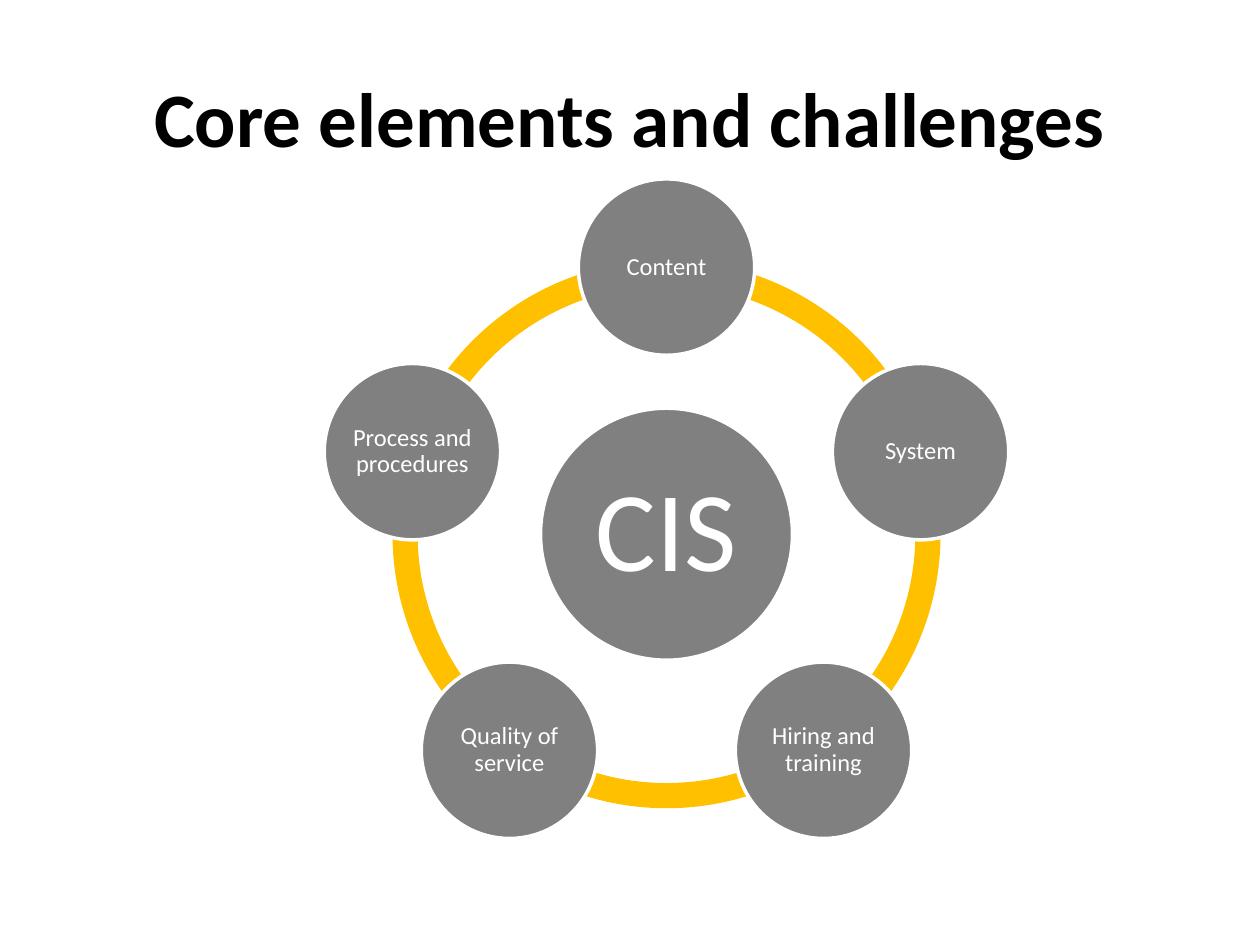
"""Build a slide showing CIS surrounded by a ring of five core elements."""
import math

import pptx
import pptx.dml.color
import pptx.enum.shapes
import pptx.enum.text
import pptx.util

TITLE = "Core elements and challenges"
HUB = "CIS"
ELEMENTS = ["Content", "System", "Hiring and training",
            "Quality of service", "Process and procedures"]

GREY, AMBER, WHITE, BLACK = "808080", "FFC000", "FFFFFF", "000000"
WIDTH, HEIGHT = 10, 7.5
CENTER_X, CENTER_Y = 5.29, 4.24
ORBIT, RING_SIZE, RING_THICKNESS = 2.12, 4.35, 0.046
HUB_SIZE, NODE_SIZE = 2, 1.4
STEP = 360 / len(ELEMENTS)
TOP_ANGLE = 270
ANGLE_UNIT = 0.6

SHAPE = pptx.enum.shapes.MSO_SHAPE
inch = pptx.util.Inches


def rgb(color):
    return pptx.dml.color.RGBColor.from_string(color)


def write(sp, text, size, color, inset, bold=False):
    tf = sp.text_frame
    tf.word_wrap = True
    tf.vertical_anchor = pptx.enum.text.MSO_ANCHOR.MIDDLE
    tf.margin_left = tf.margin_right = inch(inset)
    tf.margin_top = tf.margin_bottom = inch(inset)
    p = tf.paragraphs[0]
    p.text = text
    p.alignment = pptx.enum.text.PP_ALIGN.CENTER
    p.font.name = "Calibri"
    p.font.size = pptx.util.Pt(size)
    p.font.bold = bold
    p.font.color.rgb = rgb(color)
    return p


def add_centered(shapes, kind, x, y, size, color):
    sp = shapes.add_shape(kind, inch(x - size / 2), inch(y - size / 2),
                          inch(size), inch(size))
    sp.shadow.inherit = False
    sp.fill.solid()
    sp.fill.fore_color.rgb = rgb(color)
    sp.line.fill.background()
    return sp


def add_circle(shapes, x, y, size, text, font_size, inset):
    sp = add_centered(shapes, SHAPE.OVAL, x, y, size, GREY)
    sp.line.color.rgb = rgb(WHITE)
    sp.line.width = pptx.util.Pt(2)
    write(sp, text, font_size, WHITE, inset).line_spacing = 0.9


def add_arc(shapes, start):
    sp = add_centered(shapes, SHAPE.BLOCK_ARC, CENTER_X, CENTER_Y, RING_SIZE, AMBER)
    sp.adjustments[0] = start % 360 * ANGLE_UNIT
    sp.adjustments[1] = (start + STEP) % 360 * ANGLE_UNIT
    sp.adjustments[2] = RING_THICKNESS


def main():
    prs = pptx.Presentation()
    prs.slide_width, prs.slide_height = inch(WIDTH), inch(HEIGHT)
    s = prs.slides.add_slide(prs.slide_layouts[6])
    title = s.shapes.add_textbox(inch(0.5), inch(0.3), inch(WIDTH - 1), inch(1.25))
    write(title, TITLE, 44, BLACK, 0.05, bold=True)

    shapes = s.shapes.add_group_shape().shapes
    angles = [TOP_ANGLE + i * STEP for i in range(len(ELEMENTS))]
    for angle in angles:
        add_arc(shapes, angle)
    add_circle(shapes, CENTER_X, CENTER_Y, HUB_SIZE, HUB, 65, 0.09)
    for angle, text in zip(angles, ELEMENTS):
        x = CENTER_X + ORBIT * math.cos(math.radians(angle))
        y = CENTER_Y + ORBIT * math.sin(math.radians(angle))
        add_circle(shapes, x, y, NODE_SIZE, text, 14, 0.02)
    prs.save("out.pptx")


if __name__ == "__main__":
    main()
